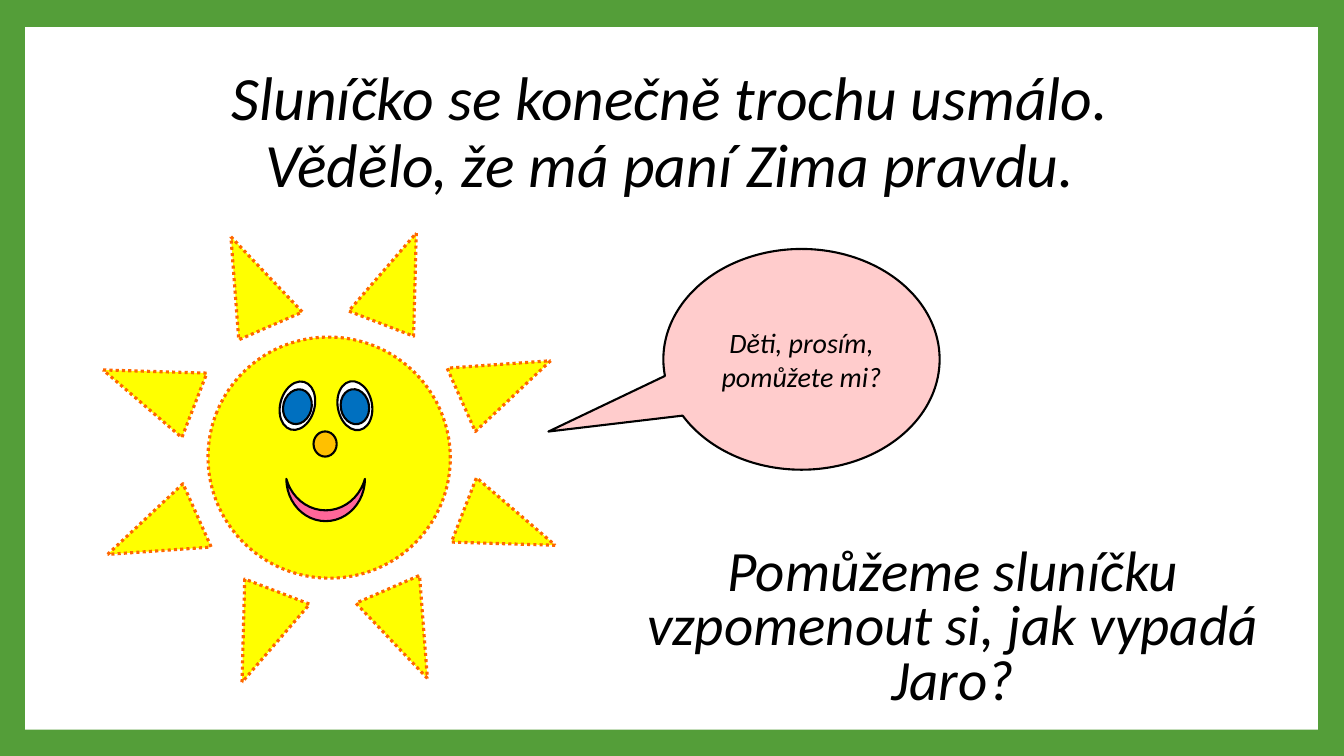
from pptx import Presentation
from pptx.dml.color import RGBColor as Rgb
from pptx.enum.dml import MSO_LINE_DASH_STYLE as Dash
from pptx.enum.shapes import MSO_SHAPE as Kind
from pptx.enum.text import MSO_ANCHOR as Anchor, PP_ALIGN as Align
from pptx.util import Pt

PX = 9144  # EMU per px, 100 px to the inch
BLACK = "000000"
WHITE = "FFFFFF"


def paint(fill, color):
    fill.solid()
    fill.fore_color.rgb = Rgb.from_string(color)


def shape(home, kind, box, color, edge=BLACK, width=1.5, turn=0):
    item = home.shapes.add_shape(kind, *[n * PX for n in box])
    item.shadow.inherit = False
    item.rotation = turn
    paint(item.fill, color)
    if edge:
        paint(item.line.fill, edge)
        item.line.width = Pt(width)
    else:
        item.line.fill.background()
    return item


def write(item, text, size, space=1.0):
    frame = item.text_frame
    frame.word_wrap = True
    frame.vertical_anchor = Anchor.MIDDLE
    par = frame.paragraphs[0]
    par.text = text
    par.alignment = Align.CENTER
    par.line_spacing = space
    for run in par.runs:
        font = run.font
        font.name = "Calibri"
        font.size = Pt(size)
        font.italic = True
        font.color.rgb = Rgb.from_string(BLACK)


def label(slide, box, text, size, space):
    item = slide.shapes.add_textbox(*[n * PX for n in box])
    write(item, text, size, space)


def eye(face, left, turn):
    shape(face, Kind.OVAL, (left, 378, 34, 49), WHITE, turn=turn)
    shape(face, Kind.OVAL, (left + 3, 386, 28, 35), "0070C0", turn=turn)


def sun(slide):
    face = slide.shapes.add_group_shape()
    disc = shape(face, Kind.SUN, (86, 215, 481, 478), "FFFF00",
                 "FF6600", 2.25, 21.2)
    disc.line.dash_style = Dash.ROUND_DOT
    eye(face, 278, 15.6)
    eye(face, 335, 349)
    # Nose and smile
    shape(face, Kind.OVAL, (311, 428, 23, 25), "FFC000")
    smile = shape(face, Kind.MOON, (302, 457, 42, 78), "FF6699", turn=90)
    smile.adjustments[0] = 0.255
    smile._element.spPr.xfrm.set("flipH", "1")


def bubble(slide):
    item = shape(slide, Kind.OVAL_CALLOUT, (658, 247, 274, 219), "FFCCCC")
    item.adjustments[0] = -0.916
    item.adjustments[1] = 0.327
    write(item, "Děti, prosím, pomůžete mi?", 20)


def main():
    deck = Presentation()
    deck.slide_width, deck.slide_height = 1333 * PX, 750 * PX
    slide = deck.slides.add_slide(deck.slide_layouts[6])

    # Green frame around a white page
    paint(slide.background.fill, "549E39")
    shape(slide, Kind.RECTANGLE, (25, 27, 1282, 697), WHITE, edge=None)

    # Sun, its speech and the story text
    sun(slide)
    label(slide, (125, 59, 1080, 148),
          "Sluníčko se konečně trochu usmálo.\vVědělo, že má paní Zima pravdu.",
          44, 0.9)
    bubble(slide)
    label(slide, (614, 532, 662, 185),
          "Pomůžeme sluníčku vzpomenout si, jak vypadá Jaro?", 40.7, 0.8)

    deck.save("out.pptx")


if __name__ == "__main__":
    main()
